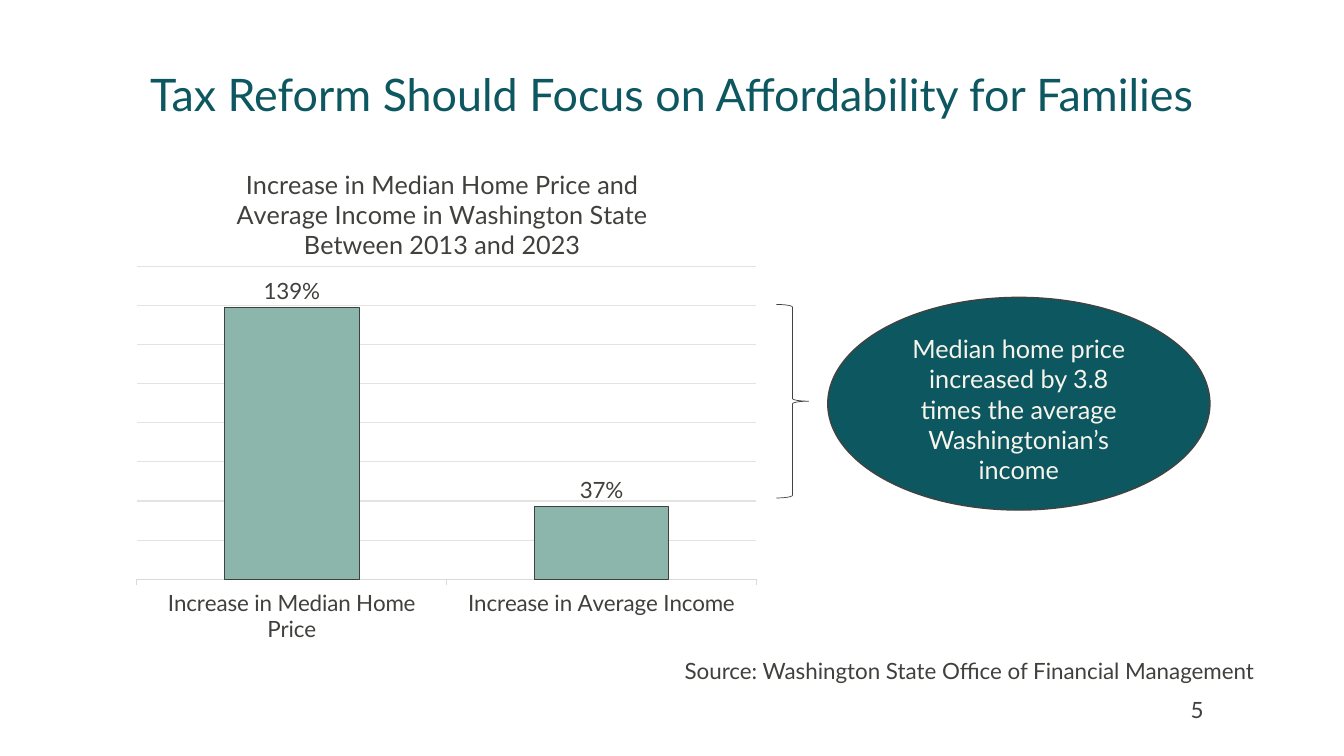
"""Build the slide on home prices and incomes in Washington State."""
from lxml.etree import SubElement
from pptx import Presentation
from pptx.chart.data import CategoryChartData as Data
from pptx.dml.color import RGBColor
from pptx.enum.chart import XL_CHART_TYPE as Kind, XL_LABEL_POSITION as Spot, XL_TICK_LABEL_POSITION as Tick, XL_TICK_MARK as Mark
from pptx.enum.shapes import MSO_SHAPE as Form
from pptx.enum.text import MSO_ANCHOR as Anchor, PP_ALIGN as Align
from pptx.oxml.ns import qn
from pptx.util import Inches, Pt

TEAL = RGBColor(0x0D, 0x57, 0x61)
SAGE = RGBColor(0x8C, 0xB5, 0xAB)
INK = RGBColor(0x40, 0x40, 0x3D)
EDGE = RGBColor(0x42, 0x43, 0x40)
CREAM = RGBColor(0xF7, 0xF5, 0xEB)
AXIS = RGBColor(0xD9, 0xD9, 0xD9)
GRID = RGBColor(0xE3, 0xE3, 0xE1)


def style(font, size, color=INK):
    for key, val in {"name": "Lato", "size": Pt(size), "bold": False}.items():
        setattr(font, key, val)
    font.color.rgb = color


def place(node, spots):
    for old in node.findall(qn("c:layout")):
        node.remove(old)
    box = SubElement(node, qn("c:layout"))
    inner = SubElement(box, qn("c:manualLayout"))
    for tag, val in spots.items():
        SubElement(inner, qn("c:" + tag)).set("val", str(val))
    return box


deck = Presentation()
deck.slide_width, deck.slide_height = Inches(13.33), Inches(7.5)
slide = deck.slides.add_slide(deck.slide_layouts[5])
shapes = slide.shapes

data = Data(number_format="0%")
data.categories = ["Increase in Median Home Price", "Increase in Average Income"]
data.add_series("Series 1", [1.39, 0.37])
area = [Inches(n) for n in (1.23, 1.37, 6.4, 5.09)]
chart = shapes.add_chart(Kind.COLUMN_CLUSTERED, *area, data).chart
style(chart.font, 10)
chart.font.name = "Calibri"
chart.has_legend = False

head = chart.chart_title.text_frame
lines = ["Increase in Median Home Price and", "Average Income in Washington State", "Between 2013 and 2023"]
for i, line in enumerate(lines):
    para = head.add_paragraph() if i else head.paragraphs[0]
    run = para.add_run()
    run.text = line
    style(run.font, 18)
chart.chart_title.include_in_layout = False
title = chart.chart_title._element
box = place(title, {"xMode": "edge", "yMode": "edge", "x": 0.17, "y": 0.05})
title.find(qn("c:tx")).addnext(box)

plot = chart.plots[0]
for key, val in {"gap_width": 130, "overlap": -55, "vary_by_categories": False, "has_data_labels": True}.items():
    setattr(plot, key, val)
tags = plot.data_labels
for key, val in {"show_value": True, "position": Spot.OUTSIDE_END, "number_format": "0%", "number_format_is_linked": False}.items():
    setattr(tags, key, val)
style(tags.font, 16)
bars = plot.series[0].format
bars.fill.solid()
bars.fill.fore_color.rgb = SAGE
bars.line.color.rgb = INK
bars.line.width = Pt(0.75)

cat, rate = chart.category_axis, chart.value_axis
style(cat.tick_labels.font, 16)
cat.major_tick_mark = Mark.OUTSIDE
for key, val in {"minimum_scale": 0, "maximum_scale": 1.6, "major_unit": 0.2, "has_major_gridlines": True, "visible": False, "tick_label_position": Tick.NONE}.items():
    setattr(rate, key, val)
for rule, color in ((cat.format.line, AXIS), (rate.major_gridlines.format.line, GRID)):
    rule.color.rgb = color
    rule.width = Pt(0.75)
field = chart._chartSpace.chart.plotArea
box = place(field, {"layoutTarget": "inner", "xMode": "edge", "yMode": "edge", "x": 0.02, "y": 0.25, "w": 0.96, "h": 0.61})
field.insert(0, box)

for form, spot, fill, width in (
    (Form.RIGHT_BRACE, (7.7, 3.02, 0.32, 1.92), None, 0.5),
    (Form.OVAL, (8.21, 2.95, 3.79, 2.11), TEAL, 1),
):
    shape = shapes.add_shape(form, *[Inches(n) for n in spot])
    shape.shadow.inherit = False
    if fill is None:
        shape.fill.background()
    else:
        shape.fill.solid()
        shape.fill.fore_color.rgb = fill
    shape.line.color.rgb = EDGE
    shape.line.width = Pt(width)

for text, spot, size, color, align, anchor in (
    ("Tax Reform Should Focus on Affordability for Families", (0.49, 0.59, 12.35, 0.74), 32, TEAL, Align.CENTER, Anchor.MIDDLE),
    ("Median home price increased by 3.8 times the average Washingtonian’s income", (8.79, 3.26, 2.63, 1.62), 18, CREAM, Align.CENTER, Anchor.TOP),
    ("Source: Washington State Office of Financial Management", (5.52, 6.47, 7.02, 0.37), 16, INK, Align.RIGHT, Anchor.TOP),
    ("5", (11.71, 6.84, 0.7, 0.4), 16, INK, Align.LEFT, Anchor.MIDDLE),
):
    left, top, wide, high = [Inches(n) for n in spot]
    note = shapes.title if size == 32 else shapes.add_textbox(left, top, wide, high)
    for key, val in {"left": left, "top": top, "width": wide, "height": high}.items():
        setattr(note, key, val)
    frame = note.text_frame
    for key, val in {"text": text, "word_wrap": True, "vertical_anchor": anchor}.items():
        setattr(frame, key, val)
    para = frame.paragraphs[0]
    para.alignment = align
    style(para.runs[0].font, size, color)
shapes.title.text_frame.paragraphs[0].line_spacing = 0.9

deck.save("out.pptx")
